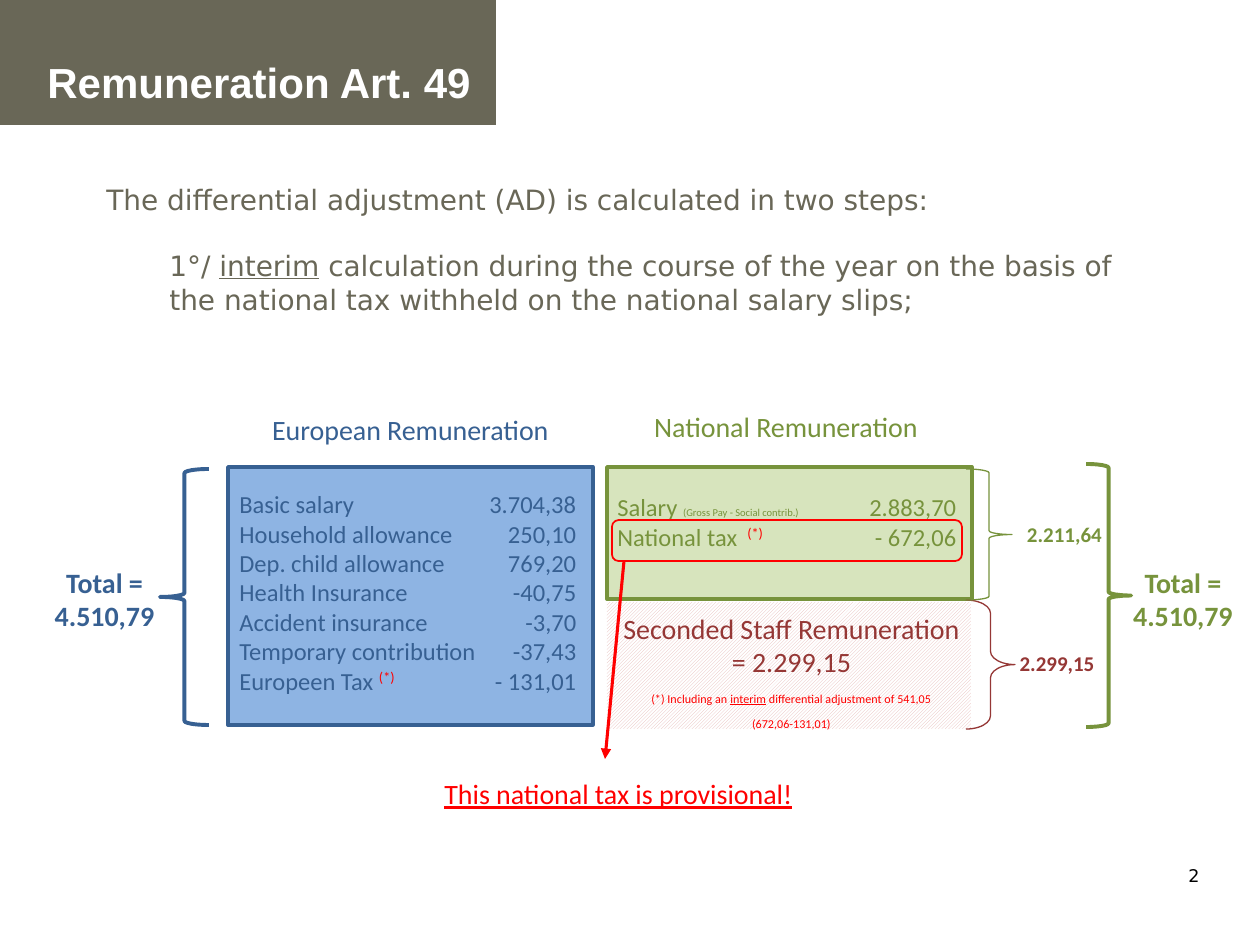
import dataclasses

import lxml.etree
import pptx
import pptx.dml.color
import pptx.enum.dml
import pptx.enum.shapes
import pptx.enum.text
import pptx.oxml.ns
import pptx.util

EMU_PER_PX = 914400 / 126
SHAPES = pptx.enum.shapes.MSO_SHAPE
ALIGN = pptx.enum.text.PP_ALIGN
ANCHOR = pptx.enum.text.MSO_ANCHOR


@dataclasses.dataclass(frozen=True)
class Theme:
    olive: str = "696757"
    white: str = "FFFFFF"
    black: str = "000000"
    blue: str = "376092"
    light_blue: str = "8EB4E3"
    green: str = "77933C"
    light_green: str = "D7E4BD"
    maroon: str = "953735"
    pink: str = "E6B9B8"
    red: str = "FF0000"
    title_font: str = "Arial"
    body_font: str = "DejaVu Sans"
    figure_font: str = "Calibri"
    title_size: int = 24
    body_size: int = 16
    row_size: int = 14
    note_size: int = 12
    page_size: int = 10
    tiny_size: int = 6


THEME = Theme()


@dataclasses.dataclass
class Line:
    runs: list
    space_before: int = 0
    indent: int = 0
    tabs: tuple = ()


def px(length):
    return pptx.util.Emu(round(length * EMU_PER_PX))


def rgb(color):
    return pptx.dml.color.RGBColor.from_string(color)


def add_element(parent, tag, **attributes):
    return lxml.etree.SubElement(parent, pptx.oxml.ns.qn(tag), attributes)


def format_run(run, color, size, font, bold=False, underline=False, raised=False):
    run.font.name = font
    run.font.size = pptx.util.Pt(size)
    run.font.bold = bold
    run.font.underline = underline
    run.font.color.rgb = rgb(color)
    if raised:
        run._r.get_or_add_rPr().set("baseline", "30000")


def add_text(slide, box, lines, align=ALIGN.LEFT, anchor=ANCHOR.TOP, **style):
    frame = slide.shapes.add_textbox(*map(px, box)).text_frame
    frame.word_wrap = True
    frame.vertical_anchor = anchor
    if isinstance(lines, str):
        lines = [Line([(lines, {})])]
    for index, line in enumerate(lines):
        paragraph = frame.add_paragraph() if index else frame.paragraphs[0]
        paragraph.alignment = align
        properties = paragraph._p.get_or_add_pPr()
        if line.indent:
            properties.set("marL", str(px(line.indent)))
        if line.tabs:
            stops = add_element(properties, "a:tabLst")
            for position, side in line.tabs:
                add_element(stops, "a:tab", pos=str(px(position)), algn=side)
        if line.space_before:
            paragraph.space_before = pptx.util.Pt(line.space_before)
        for text, changes in line.runs:
            run = paragraph.add_run()
            run.text = text
            format_run(run, **{**style, **changes})


def add_panel(slide, kind, box, fill=None, line=None, width=1, hatch=None):
    panel = slide.shapes.add_shape(kind, *map(px, box))
    panel.shadow.inherit = False
    if hatch:
        panel.fill.patterned()
        panel.fill.pattern = pptx.enum.dml.MSO_PATTERN.LIGHT_UPWARD_DIAGONAL
        panel.fill.fore_color.rgb = rgb(hatch)
        panel.fill.back_color.rgb = rgb(THEME.white)
    elif fill:
        panel.fill.solid()
        panel.fill.fore_color.rgb = rgb(fill)
    else:
        panel.fill.background()
    if line:
        panel.line.color.rgb = rgb(line)
        panel.line.width = pptx.util.Pt(width)
    else:
        panel.line.fill.background()
    return panel


def add_brace(slide, box, color, width, rotation=180, curl=None):
    brace = add_panel(slide, SHAPES.LEFT_BRACE, box, line=color, width=width)
    brace.rotation = rotation
    if curl:
        brace.adjustments[0] = curl


def add_arrow(slide, start, end, color, width):
    arrow = slide.shapes.add_connector(
        pptx.enum.shapes.MSO_CONNECTOR.STRAIGHT, *map(px, start + end))
    arrow.line.color.rgb = rgb(color)
    arrow.line.width = pptx.util.Pt(width)
    add_element(arrow.get_or_add_ln(), "a:tailEnd", type="triangle")
    add_element(arrow._element.spPr, "a:effectLst")


def add_heading(slide):
    add_panel(slide, SHAPES.RECTANGLE, (0, 0, 496, 125), fill=THEME.olive)
    add_text(slide, (35, 50, 451, 63), "Remuneration Art. 49", anchor=ANCHOR.BOTTOM,
             color=THEME.white, size=THEME.title_size, font=THEME.title_font, bold=True)
    steps = [
        Line([("The differential adjustment (AD) is calculated in two steps:", {})]),
        Line([("1°/ ", {}), ("interim", {"underline": True}),
              (" calculation during the course of the year on the basis of "
               "the national tax withheld on the national salary slips;", {})],
             space_before=19, indent=63),
    ]
    add_text(slide, (94, 176, 1062, 178), steps, color=THEME.olive,
             size=THEME.body_size, font=THEME.body_font)


def add_european(slide):
    style = {"color": THEME.blue, "font": THEME.figure_font}
    mark = ("(*)", {"color": THEME.red, "raised": True})
    amounts = [
        ("Basic salary", "3.704,38"), ("Household allowance", "250,10"),
        ("Dep. child allowance", "769,20"), ("Health Insurance", "-40,75"),
        ("Accident insurance", "-3,70"), ("Temporary contribution", "-37,43"),
    ]
    tabs = ((337, "r"),)
    rows = [Line([(f"{label}\t{amount}", {})], tabs=tabs) for label, amount in amounts]
    rows.append(Line([("Europeen Tax ", {}), mark, ("\t- 131,01", {})], tabs=tabs))
    add_panel(slide, SHAPES.RECTANGLE, (228, 467, 365, 258),
              fill=THEME.light_blue, line=THEME.blue, width=2)
    add_text(slide, (227, 483, 367, 244), rows, size=THEME.row_size, **style)
    add_text(slide, (228, 406, 365, 47), "European Remuneration", align=ALIGN.CENTER,
             size=THEME.body_size, **style)


def add_national(slide):
    style = {"color": THEME.green, "font": THEME.figure_font}
    rows = [
        Line([("Salary ", {}), ("(Gross Pay - Social contrib.)", {"size": THEME.tiny_size}),
              ("\t2.883,70", {})], tabs=((339, "r"),)),
        Line([("National tax\t", {}), ("(*)", {"color": THEME.red, "raised": True}),
              ("\t- 672,06", {})], tabs=((130, "l"), (339, "r"))),
    ]
    add_panel(slide, SHAPES.RECTANGLE, (607, 467, 365, 132),
              fill=THEME.light_green, line=THEME.green, width=2)
    add_text(slide, (605, 486, 367, 106), rows, size=THEME.row_size, **style)
    add_text(slide, (595, 403, 382, 47), "National Remuneration", align=ALIGN.CENTER,
             size=THEME.body_size, **style)


def add_seconded(slide):
    note = {"size": THEME.note_size, "color": THEME.red, "raised": True}
    lines = [
        Line([("Seconded Staff Remuneration", {})]),
        Line([("= 2.299,15", {})]),
        Line([("(*) Including an ", note), ("interim", {**note, "underline": True}),
              (" differential adjustment of 541,05", note)], space_before=6),
        Line([("(672,06-131,01)", note)]),
    ]
    add_panel(slide, SHAPES.RECTANGLE, (607, 602, 364, 127), hatch=THEME.pink)
    add_text(slide, (598, 605, 387, 125), lines, align=ALIGN.CENTER,
             color=THEME.maroon, size=THEME.body_size, font=THEME.figure_font)


def add_totals(slide):
    add_brace(slide, (160, 469, 49, 256), THEME.blue, 2.25, rotation=0)
    add_brace(slide, (966, 600, 49, 129), THEME.maroon, 0.75, curl=0.27)
    add_brace(slide, (966, 469, 46, 131), THEME.green, 0.75)
    add_brace(slide, (1086, 464, 45, 263), THEME.green, 2.25)
    totals = [
        ((6, 559, 197, 81), "Total = 4.510,79", THEME.blue, THEME.body_size),
        ((1106, 559, 154, 81), "Total = 4.510,79", THEME.green, THEME.body_size),
        ((963, 515, 203, 38), "2.211,64", THEME.green, THEME.note_size),
        ((1003, 644, 108, 38), "2.299,15", THEME.maroon, THEME.note_size),
    ]
    for box, total, color, size in totals:
        add_text(slide, box, total, align=ALIGN.CENTER, color=color, size=size,
                 font=THEME.figure_font, bold=True)


def add_provisional_note(slide):
    add_panel(slide, SHAPES.ROUNDED_RECTANGLE, (612, 520, 350, 41), line=THEME.red)
    add_arrow(slide, (624, 561), (605, 759), THEME.red, 1.75)
    add_text(slide, (432, 770, 742, 71), "This national tax is provisional!",
             color=THEME.red, size=THEME.body_size, font=THEME.figure_font, underline=True)


def main():
    deck = pptx.Presentation()
    deck.slide_width, deck.slide_height = px(1260), px(945)
    slide = deck.slides.add_slide(deck.slide_layouts[6])
    for add_part in (add_heading, add_european, add_national, add_seconded,
                     add_totals, add_provisional_note):
        add_part(slide)
    add_text(slide, (1176, 859, 49, 34), "2", color=THEME.black,
             size=THEME.page_size, font=THEME.body_font)
    deck.save("out.pptx")


if __name__ == "__main__":
    main()
